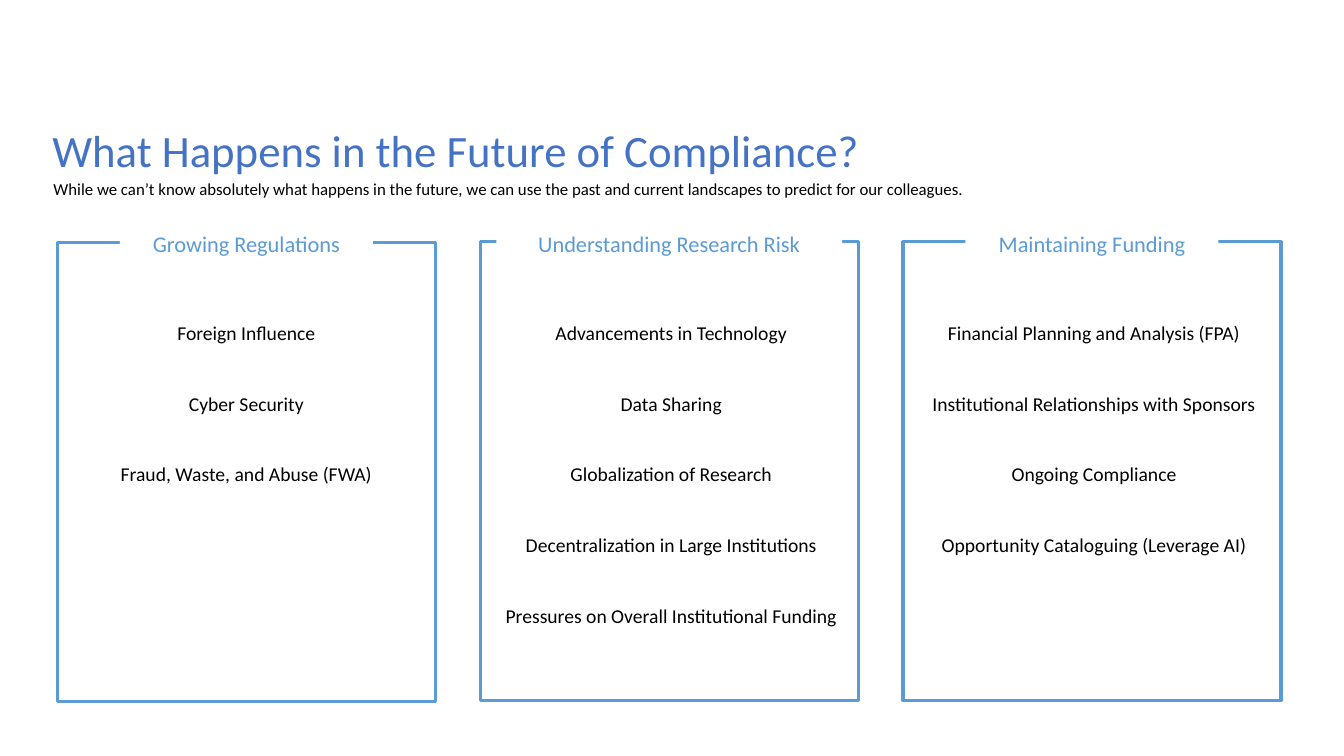
"""Build the slide on the future of compliance with three framed lists."""
from dataclasses import dataclass

from lxml import etree
from pptx import Presentation
from pptx.dml.color import RGBColor
from pptx.enum.shapes import MSO_SHAPE
from pptx.enum.text import MSO_ANCHOR, MSO_AUTO_SIZE, PP_ALIGN
from pptx.oxml.ns import qn
from pptx.util import Pt

RECT = MSO_SHAPE.RECTANGLE
TOP, MIDDLE = MSO_ANCHOR.TOP, MSO_ANCHOR.MIDDLE
LEFT, CENTER = PP_ALIGN.LEFT, PP_ALIGN.CENTER
FIXED = MSO_AUTO_SIZE.NONE
COLORS = {"title": "4472C4", "frame": "5B9BD5", "text": "000000", "back": "FFFFFF"}
FONT = "Calibri"
WIDTH, HEIGHT = 270, 327.6
START, PITCH = 41, 302


@dataclass
class Panel:
    """Hold one framed list and its heading."""
    heading: str
    items: list[str]
    top: float
    cover: float
    shift: float
    depth: float


PANELS = [
    Panel("Growing Regulations",
          ["Foreign Influence", "Cyber Security", "Fraud, Waste, and Abuse (FWA)"],
          173.5, 180.7, 0, 151.2),
    Panel("Understanding Research Risk",
          ["Advancements in Technology", "Data Sharing", "Globalization of Research",
           "Decentralization in Large Institutions",
           "Pressures on Overall Institutional Funding"],
          172.8, 247, 1.5, 252.7),
    Panel("Maintaining Funding",
          ["Financial Planning and Analysis (FPA)",
           "Institutional Relationships with Sponsors", "Ongoing Compliance",
           "Opportunity Cataloguing (Leverage AI)"],
          172.8, 180.7, 1.5, 252.7),
]


def tint(name: str) -> RGBColor:
    """Return a named colour."""
    return RGBColor.from_string(COLORS[name])


def place(shape, left: float, top: float, width: float, height: float) -> None:
    """Set the place and size of a shape."""
    shape.left, shape.top = Pt(left), Pt(top)
    shape.width, shape.height = Pt(width), Pt(height)


def write(shape, lines: list[str], size: float, color: str, align: PP_ALIGN,
          spacing: float, anchor: MSO_ANCHOR = TOP) -> None:
    """Fill a shape with plain paragraphs without bullets."""
    frame = shape.text_frame
    frame.text = "\n".join(lines)
    frame.word_wrap = True
    frame.auto_size = FIXED
    frame.vertical_anchor = anchor
    for para in frame.paragraphs:
        props = para._p.get_or_add_pPr()
        props.set("marL", "0")
        props.set("indent", "0")
        etree.SubElement(props, qn("a:buNone"))
        para.alignment = align
        para.line_spacing = spacing
        para.space_before = Pt(0)
        for run in para.runs:
            run.font.name = FONT
            run.font.size = Pt(size)
            run.font.bold = False
            run.font.color.rgb = tint(color)


def add_box(slide, left: float, top: float, width: float, height: float):
    """Add a plain rectangle without a shadow."""
    box = slide.shapes.add_shape(RECT, Pt(left), Pt(top), Pt(width), Pt(height))
    box.shadow.inherit = False
    return box


def draw_panel(slide, panel: Panel, left: float, body) -> None:
    """Draw a frame, its heading and its list."""
    frame = add_box(slide, left, panel.top, WIDTH, HEIGHT)
    frame.fill.background()
    frame.line.color.rgb = tint("frame")
    frame.line.width = Pt(2.25)

    head = add_box(slide, left + (WIDTH - panel.cover) / 2, 164.2, panel.cover, 19.4)
    head.fill.solid()
    head.fill.fore_color.rgb = tint("back")
    head.line.fill.background()
    write(head, [panel.heading], 16, "frame", CENTER, 1, MIDDLE)
    text = head.text_frame
    text.margin_left = text.margin_right = text.margin_top = text.margin_bottom = 0

    place(body, left + panel.shift, 192.2, WIDTH, panel.depth)
    write(body, panel.items, 14, "text", CENTER, 3)


def main() -> None:
    """Build and save the deck."""
    deck = Presentation()
    deck.slide_width, deck.slide_height = Pt(960), Pt(540)
    slide = deck.slides.add_slide(deck.slide_layouts.get_by_name("Comparison"))
    title, intro, *bodies = slide.placeholders

    place(title, 30.2, 88.6, 881.3, 35.3)
    write(title, ["What Happens in the Future of Compliance?"], 32, "title", LEFT, 0.9)
    place(intro, 31, 126, 856, 58.3)
    write(intro, ["While we can’t know absolutely what happens in the future, we can use "
                  "the past and current landscapes to predict for our colleagues."],
          12, "text", LEFT, 0.9)

    for index, (panel, body) in enumerate(zip(PANELS, bodies)):
        draw_panel(slide, panel, START + index * PITCH, body)
    deck.save("out.pptx")


if __name__ == "__main__":
    main()
